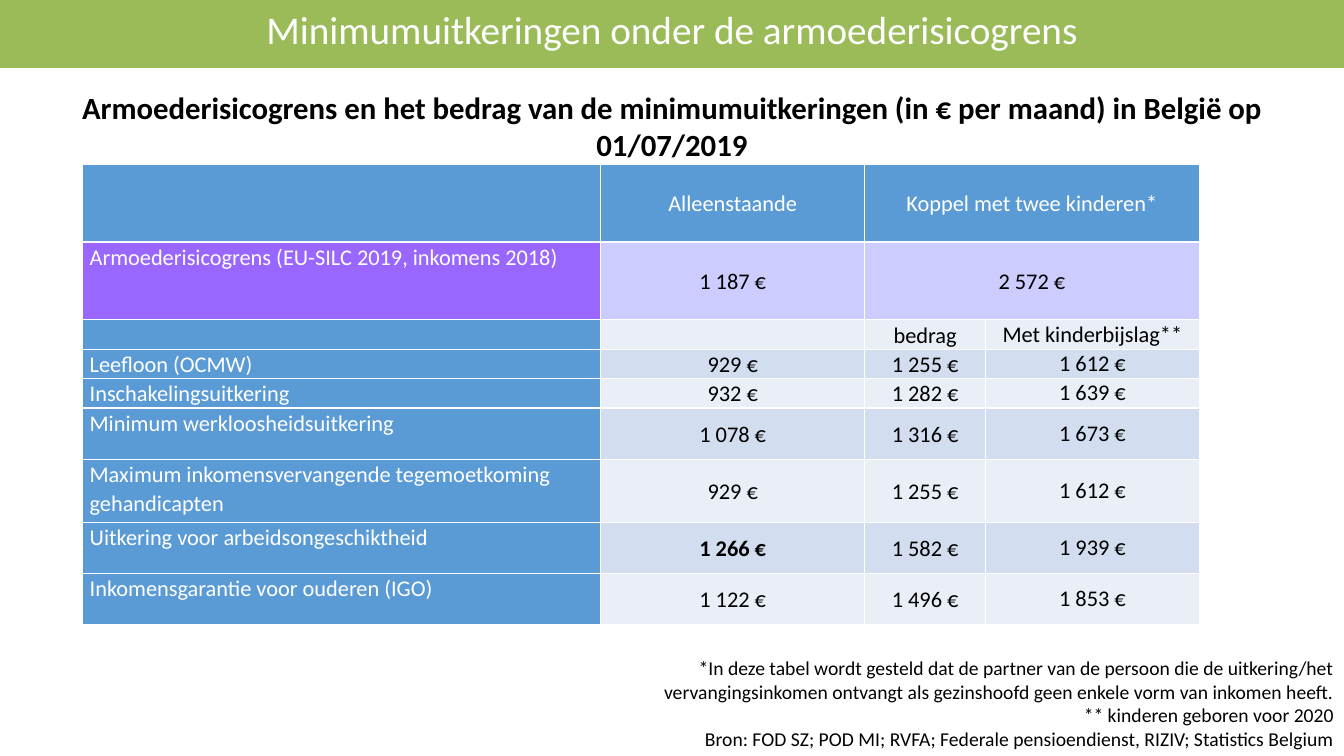
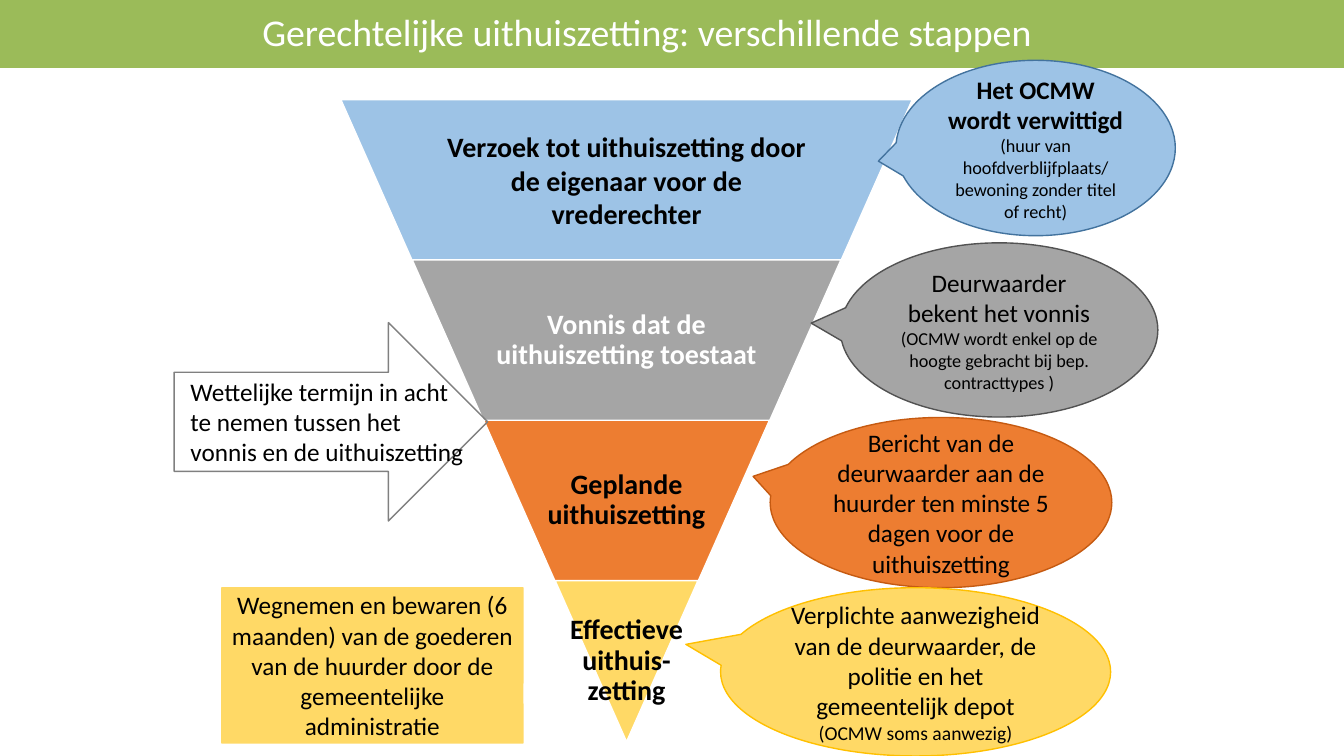
from dataclasses import dataclass

from lxml.etree import SubElement
from pptx import Presentation
from pptx.dml.color import RGBColor
from pptx.enum.shapes import MSO_SHAPE
from pptx.enum.text import MSO_ANCHOR, PP_ALIGN
from pptx.oxml.ns import qn
from pptx.util import Cm, Pt


@dataclass(frozen=True)
class Theme:
    font: str = "Calibri"
    green: str = "9BBB59"
    white: str = "FFFFFF"
    black: str = "000000"
    blue: str = "5B9BD5"
    purple: str = "9966FF"
    lilac: str = "CCCCFF"
    stripe_dark: str = "D2DEEF"
    stripe_light: str = "EAEFF7"
    sky: str = "9DC3E6"
    sky_edge: str = "43739E"
    grey: str = "A5A5A5"
    grey_edge: str = "525252"
    arrow_edge: str = "808080"
    orange: str = "ED7D31"
    orange_edge: str = "C55A11"
    yellow: str = "FFD966"
    yellow_edge: str = "FFC000"
    subtitle_size: int = 22
    level_size: int = 20
    body_size: int = 18
    table_size: int = 16
    footnote_size: int = 14
    edge: float = 1
    band_share: float = 0.09


THEME = Theme()
SLIDE_WIDTH, SLIDE_HEIGHT = 33.87, 19.05

# Boxes are left, top, width, height in centimetres.
BENEFITS_TITLE = "Minimumuitkeringen onder de armoederisicogrens"
BENEFITS_TITLE_BOX = (0, 0, SLIDE_WIDTH, 1.45)
SUBTITLE = ("Armoederisicogrens en het bedrag van de minimumuitkeringen "
            "(in € per maand) in België op 01/07/2019")
SUBTITLE_BOX = (0, 2.11, SLIDE_WIDTH, 2.13)
FOOTNOTES = [
    "*In deze tabel wordt gesteld dat de partner van de persoon die de uitkering/het "
    "vervangingsinkomen ontvangt als gezinshoofd geen enkele vorm van inkomen heeft.",
    "** kinderen geboren voor 2020",
    "Bron: FOD SZ; POD MI; RVFA; Federale pensioendienst, RIZIV; Statistics Belgium",
]
FOOTNOTES_BOX = (13.59, 16.41, 20.28, 2.64)

TABLE_LEFT, TABLE_TOP = 2.08, 4.14
COLUMN_WIDTHS = (13.06, 6.65, 3.05, 5.38)
HEADING_ROWS = 2
BENEFITS = [  # row height, cells
    (1.96, ("", "Alleenstaande", "Koppel met twee kinderen*", "")),
    (1.96, ("Armoederisicogrens (EU-SILC 2019, inkomens 2018)", "1 187 €", "2 572 €", "")),
    (0.74, ("", "", "bedrag", "Met kinderbijslag**")),
    (0.74, ("Leefloon (OCMW)", "929 €", "1 255 €", "1 612 €")),
    (0.74, ("Inschakelingsuitkering", "932 €", "1 282 €", "1 639 €")),
    (1.29, ("Minimum werkloosheidsuitkering", "1 078 €", "1 316 €", "1 673 €")),
    (1.59, ("Maximum inkomensvervangende tegemoetkoming gehandicapten",
            "929 €", "1 255 €", "1 612 €")),
    (1.29, ("Uitkering voor arbeidsongeschiktheid", "1 266 €", "1 582 €", "1 939 €")),
    (1.29, ("Inkomensgarantie voor ouderen (IGO)", "1 122 €", "1 496 €", "1 853 €")),
]
ABOVE_THRESHOLD = "1 266 €"

EVICTION_TITLE = "Gerechtelijke uithuiszetting: verschillende stappen"
EVICTION_TITLE_BOX = (5.33, 0.1, 21.95, 1.42)
FUNNEL_LEFT, FUNNEL_TOP, FUNNEL_WIDTH = 8.59, 2.51, 14.4
LEVEL_HEIGHT, LEVEL_PITCH = 4.06, 4.04
FUNNEL_LEVELS = [  # text, fill, text colour, share of width for text, line spacing
    ("Verzoek tot uithuiszetting door de eigenaar voor de vrederechter",
     THEME.sky, THEME.black, 0.65, 1.0),
    ("Vonnis dat de uithuiszetting toestaat", THEME.grey, THEME.white, 0.65, 0.9),
    ("Geplande uithuiszetting", THEME.orange, THEME.black, 0.65, 0.9),
    ("Effectieve uithuis-zetting", THEME.yellow, THEME.black, 1, 0.9),
]
ELLIPSE, BOX = MSO_SHAPE.OVAL_CALLOUT, MSO_SHAPE.RECTANGULAR_CALLOUT
CALLOUTS = [  # shape, box, tip, fill, edge, text, bold, note, note size
    (ELLIPSE, (22.58, 1.52, 7.04, 4.42), (-0.563, 0.075), THEME.sky, THEME.sky_edge,
     "Het OCMW wordt verwittigd", True,
     "(huur van hoofdverblijfplaats/ bewoning zonder titel of recht)", 13),
    (ELLIPSE, (21.18, 6.12, 8, 4.39), (-0.592, -0.039), THEME.grey, THEME.grey_edge,
     "Deurwaarder bekent het vonnis", False,
     "(OCMW wordt enkel op de hoogte gebracht bij bep. contracttypes )", 13),
    (ELLIPSE, (19.41, 10.52, 8.61, 4.29), (-0.55, -0.154), THEME.orange, THEME.orange_edge,
     "Bericht van de deurwaarder aan de huurder ten minste 5 dagen voor de uithuiszetting",
     False, None, None),
    (ELLIPSE, (18.16, 14.81, 9.83, 4.24), (-0.589, -0.163), THEME.yellow, THEME.yellow_edge,
     "Verplichte aanwezigheid van de deurwaarder, de politie en het gemeentelijk depot",
     False, "(OCMW soms aanwezig)", 14),
    (BOX, (5.59, 14.81, 7.59, 3.91), (0.499, 0.154), THEME.yellow, THEME.yellow,
     "Wegnemen en bewaren (6 maanden) van de goederen van de huurder door de "
     "gemeentelijke administratie", False, None, None),
]
TERM = "Wettelijke termijn in acht te nemen tussen het vonnis en de uithuiszetting"
TERM_ARROW_BOX = (4.39, 8.13, 7.9, 5)
TERM_TEXT_BOX = (4.55, 9.35, 7.44, 2.57)


def rgb(colour):
    return RGBColor.from_string(colour)


def in_cm(box):
    return [Cm(length) for length in box]


def style(paragraph, size, colour=THEME.black, bold=False,
          align=PP_ALIGN.CENTER, spacing=None):
    paragraph.alignment = align
    paragraph.line_spacing = spacing
    for run in paragraph.runs:
        run.font.name = THEME.font
        run.font.size = Pt(size)
        run.font.bold = bold
        run.font.color.rgb = rgb(colour)


def add_text(shapes, box, text, size, anchor=MSO_ANCHOR.TOP, inset=None, **look):
    frame = shapes.add_textbox(*in_cm(box)).text_frame
    frame.word_wrap = True
    frame.vertical_anchor = anchor
    if inset is not None:
        frame.margin_left = frame.margin_right = Cm(inset)
        frame.margin_top = frame.margin_bottom = Cm(inset)
    frame.text = text
    for paragraph in frame.paragraphs:
        style(paragraph, size, **look)


def add_outlined(shapes, kind, box, fill, edge):
    shape = shapes.add_shape(kind, *in_cm(box))
    shape.shadow.inherit = False
    if fill:
        shape.fill.solid()
        shape.fill.fore_color.rgb = rgb(fill)
    else:
        shape.fill.background()
    shape.line.color.rgb = rgb(edge)
    shape.line.width = Pt(THEME.edge)
    return shape


def paint_master(master):
    """Give every slide a white page with a green band along the top."""
    fill = master.background.fill
    fill.gradient()
    fill.gradient_angle = 270
    for stop, colour in zip(fill.gradient_stops, (THEME.green, THEME.white)):
        stop.position = THEME.band_share
        stop.color.rgb = rgb(colour)


def add_titled_slide(deck, title, box, size):
    slide = deck.slides.add_slide(deck.slide_layouts[6])
    add_text(slide.shapes, box, title, size, colour=THEME.white)
    return slide


def cell_fill(row, column):
    if row == 1:
        return THEME.lilac if column else THEME.purple
    if row == 0 or column == 0:
        return THEME.blue
    return THEME.stripe_dark if row % 2 else THEME.stripe_light


def add_cell_borders(cell):
    properties = cell._tc.get_or_add_tcPr()
    for position, side in enumerate(("a:lnL", "a:lnR", "a:lnT", "a:lnB")):
        line = properties.makeelement(qn(side), {"w": str(Pt(THEME.edge))})
        solid = SubElement(line, qn("a:solidFill"))
        SubElement(solid, qn("a:srgbClr"), val=THEME.white)
        properties.insert(position, line)


def fill_cell(cell, text, row, column):
    cell.fill.solid()
    cell.fill.fore_color.rgb = rgb(cell_fill(row, column))
    add_cell_borders(cell)
    cell.margin_left = cell.margin_right = Cm(0.03 if column == 3 else 0.18)
    cell.margin_top = cell.margin_bottom = 0
    cell.vertical_anchor = MSO_ANCHOR.MIDDLE if column else MSO_ANCHOR.TOP
    paragraph = cell.text_frame.paragraphs[0]
    paragraph.text = text
    style(paragraph, THEME.table_size,
          colour=THEME.white if row == 0 or column == 0 else THEME.black,
          bold=text == ABOVE_THRESHOLD,
          align=PP_ALIGN.CENTER if column else PP_ALIGN.LEFT,
          spacing=1.0 if column == 3 else 1.07)
    if not text:
        paragraph._p.get_or_add_endParaRPr().set("sz", str(THEME.table_size * 100))


def add_benefits_table(shapes):
    heights = [height for height, _ in BENEFITS]
    box = (TABLE_LEFT, TABLE_TOP, sum(COLUMN_WIDTHS), sum(heights))
    table = shapes.add_table(len(BENEFITS), len(COLUMN_WIDTHS), *in_cm(box)).table
    for column, width in zip(table.columns, COLUMN_WIDTHS):
        column.width = Cm(width)
    for row, (height, texts) in enumerate(BENEFITS):
        table.rows[row].height = Cm(height)
        for column, text in enumerate(texts):
            fill_cell(table.cell(row, column), text, row, column)
    for row in range(HEADING_ROWS):
        table.cell(row, 2).merge(table.cell(row, 3))


def add_funnel(shapes):
    """Stack trapezoids that narrow by one equal step per level."""
    funnel = shapes.add_group_shape().shapes
    step = FUNNEL_WIDTH / len(FUNNEL_LEVELS)
    for index, (text, fill, colour, share, spacing) in enumerate(FUNNEL_LEVELS):
        width = FUNNEL_WIDTH - index * step
        left = FUNNEL_LEFT + index * step / 2
        top = FUNNEL_TOP + index * LEVEL_PITCH
        level = add_outlined(funnel, MSO_SHAPE.TRAPEZOID,
                             (left, top, width, LEVEL_HEIGHT), fill, THEME.white)
        level.rotation = 180
        level.adjustments[0] = step / 2 / min(width, LEVEL_HEIGHT)
        text_box = (left + width * (1 - share) / 2, top, width * share, LEVEL_HEIGHT)
        add_text(funnel, text_box, text, THEME.level_size, MSO_ANCHOR.MIDDLE, 0.07,
                 colour=colour, bold=True, spacing=spacing)


def add_callout(shapes, kind, box, tip, fill, edge, text, bold, note, note_size):
    callout = add_outlined(shapes, kind, box, fill, edge)
    callout.adjustments[0], callout.adjustments[1] = tip
    frame = callout.text_frame
    frame.word_wrap = True
    frame.vertical_anchor = MSO_ANCHOR.MIDDLE
    frame.text = text
    style(frame.paragraphs[0], THEME.body_size, bold=bold)
    if note:
        paragraph = frame.add_paragraph()
        paragraph.text = note
        style(paragraph, note_size)


def build_benefits(deck):
    shapes = add_titled_slide(deck, BENEFITS_TITLE, BENEFITS_TITLE_BOX, 28).shapes
    add_benefits_table(shapes)
    add_text(shapes, SUBTITLE_BOX, SUBTITLE, THEME.subtitle_size,
             MSO_ANCHOR.MIDDLE, bold=True)
    add_text(shapes, FOOTNOTES_BOX, "\n".join(FOOTNOTES), THEME.footnote_size,
             align=PP_ALIGN.RIGHT)


def build_eviction(deck):
    shapes = add_titled_slide(deck, EVICTION_TITLE, EVICTION_TITLE_BOX, 27).shapes
    add_funnel(shapes)
    term = shapes.add_group_shape().shapes
    add_outlined(term, MSO_SHAPE.RIGHT_ARROW, TERM_ARROW_BOX, None, THEME.arrow_edge)
    add_text(term, TERM_TEXT_BOX, TERM, THEME.body_size, align=PP_ALIGN.LEFT)
    for callout in CALLOUTS:
        add_callout(shapes, *callout)


def main():
    deck = Presentation()
    deck.slide_width, deck.slide_height = Cm(SLIDE_WIDTH), Cm(SLIDE_HEIGHT)
    paint_master(deck.slide_master)
    build_benefits(deck)
    build_eviction(deck)
    deck.save("out.pptx")


if __name__ == "__main__":
    main()
